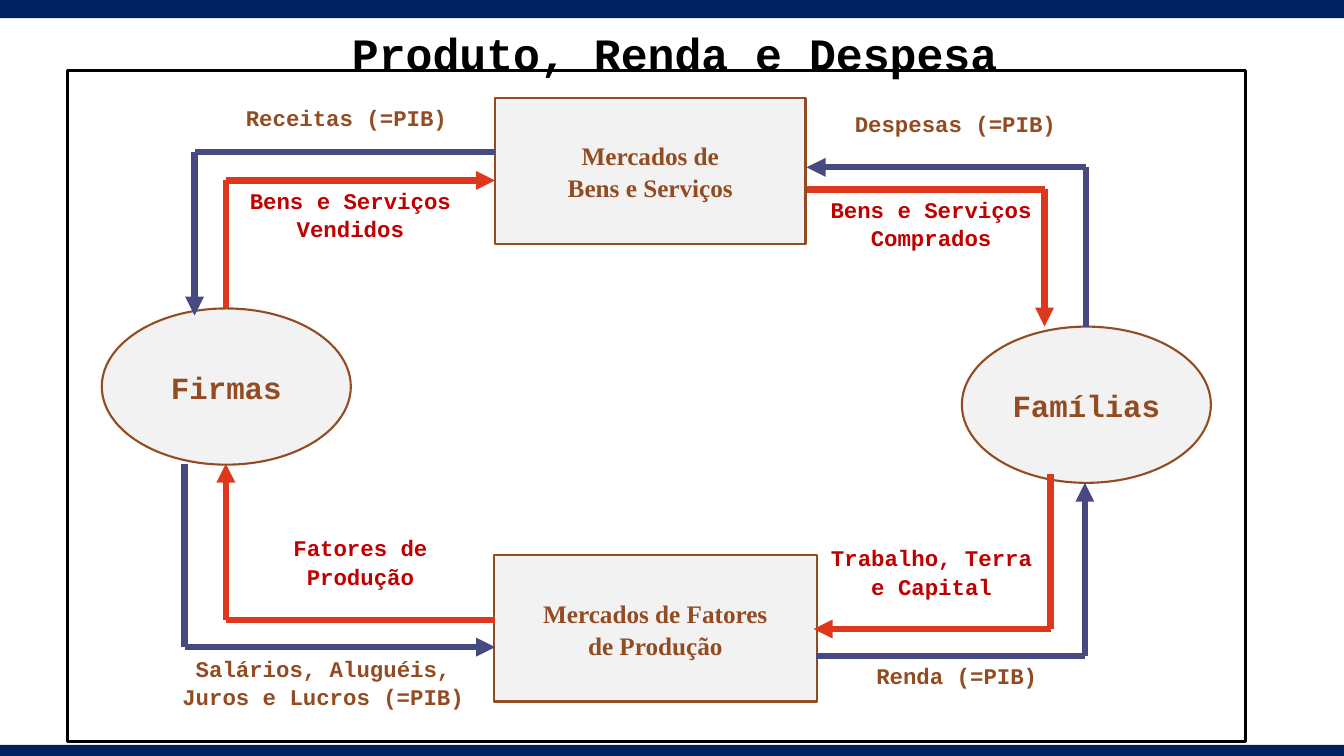
"""Build the circular-flow slide of output, income and expenditure."""
from lxml import etree
from pptx import Presentation
from pptx.dml.color import RGBColor
from pptx.enum.shapes import MSO_CONNECTOR, MSO_SHAPE
from pptx.enum.text import MSO_ANCHOR, PP_ALIGN
from pptx.oxml.ns import qn
from pptx.util import Inches, Pt

RECT, OVAL = MSO_SHAPE.RECTANGLE, MSO_SHAPE.OVAL
STRAIGHT = MSO_CONNECTOR.STRAIGHT
MIDDLE, TOP = MSO_ANCHOR.MIDDLE, MSO_ANCHOR.TOP
LEFT, CENTER = PP_ALIGN.LEFT, PP_ALIGN.CENTER

NAVY = RGBColor(0x00, 0x20, 0x60)
BLACK = RGBColor(0x00, 0x00, 0x00)
BROWN = RGBColor(0x93, 0x4C, 0x22)
GRAY = RGBColor(0xF2, 0xF2, 0xF2)
CRIMSON = RGBColor(0xC0, 0x00, 0x00)
BLUE = RGBColor(0x47, 0x4A, 0x81)
RED = RGBColor(0xDE, 0x38, 0x1C)
MONO, SERIF = "Courier New", "Times New Roman"


def write(s, text, size, font, color, align, anchor, wrap):
    tf = s.text_frame
    tf.text = text
    tf.word_wrap = wrap
    tf.vertical_anchor = anchor
    for p in tf.paragraphs:
        p.alignment = align
        p.line_spacing = 1.05
        for r in p.runs:
            r.font.size = Pt(size)
            r.font.name = font
            r.font.bold = True
            r.font.color.rgb = color


def add_box(kind, box, fill=None, line=None, width=1.5):
    s = slide.shapes.add_shape(kind, *map(Inches, box))
    s.shadow.inherit = False
    if fill is None:
        s.fill.background()
    else:
        s.fill.solid()
        s.fill.fore_color.rgb = fill
    if line is None:
        s.line.fill.background()
    else:
        s.line.color.rgb = line
        s.line.width = Pt(width)
    return s


prs = Presentation()
prs.slide_width, prs.slide_height = Inches(13.33), Inches(7.5)
slide = prs.slides.add_slide(prs.slide_layouts[5])

add_box(RECT, (0, 0, 13.33, 0.18), NAVY)
add_box(RECT, (0, 7.39, 13.33, 0.11), NAVY)

title = slide.shapes.title
title.left, title.top = Inches(3.39), Inches(0.16)
title.width, title.height = Inches(6.75), Inches(0.7)
write(title, "Produto, Renda e Despesa", 32, MONO, BLACK, LEFT, MIDDLE, True)

nodes = [
    (OVAL, (1.01, 3.06, 2.47, 1.55), "Firmas", 22, MONO),
    (OVAL, (9.54, 3.24, 2.47, 1.55), "Famílias", 22, MONO),
    (RECT, (4.9, 5.51, 3.2, 1.45), "Mercados de Fatores\nde Produção", 18, SERIF),
    (RECT, (4.91, 0.97, 3.08, 1.45), "Mercados de\nBens e Serviços", 18, SERIF),
]
for kind, box, text, size, font in nodes:
    s = add_box(kind, box, GRAY, BROWN)
    write(s, text, size, font, BROWN, CENTER, MIDDLE, False)

labels = [
    ((8.38, 1.03, 2.57, 0.51), "Despesas (=PIB)", BROWN, LEFT),
    ((2.34, 0.97, 2.47, 0.51), "Receitas (=PIB)", BROWN, LEFT),
    ((1.57, 6.44, 3.27, 0.88), "Salários, Aluguéis, Juros e Lucros (=PIB)", BROWN, CENTER),
    ((8.31, 6.51, 2.36, 0.51), "Renda (=PIB)", BROWN, CENTER),
    ((2.14, 1.79, 2.67, 0.88), "Bens e Serviços Vendidos", CRIMSON, CENTER),
    ((7.9, 1.88, 2.67, 0.88), "Bens e Serviços Comprados", CRIMSON, CENTER),
    ((8.06, 5.34, 2.36, 0.88), "Trabalho, Terra e Capital", CRIMSON, CENTER),
    ((2.24, 5.24, 2.67, 0.88), "Fatores de Produção", CRIMSON, CENTER),
]
for box, text, color, align in labels:
    s = slide.shapes.add_textbox(*map(Inches, box))
    write(s, text, 16, MONO, color, align, TOP, True)

flows = [
    (BLUE, (10.77, 3.24), (10.77, 1.66), (8, 1.66)),
    (BLUE, (4.91, 1.51), (1.93, 1.51), (1.93, 3.13)),
    (BLUE, (1.83, 4.6), (1.83, 6.42), (4.91, 6.42)),
    (BLUE, (8.09, 6.51), (10.76, 6.51), (10.76, 4.79)),
    (RED, (8, 1.88), (10.36, 1.88), (10.36, 3.24)),
    (RED, (2.24, 3.06), (2.24, 1.79), (4.91, 1.79)),
    (RED, (4.91, 6.15), (2.24, 6.15), (2.24, 4.6)),
    (RED, (10.42, 4.7), (10.42, 6.24), (8.07, 6.24)),
]
for color, start, corner, end in flows:
    for a, b in ((start, corner), (corner, end)):
        s = slide.shapes.add_connector(STRAIGHT, *map(Inches, a + b))
        s.line.color.rgb = color
        s.line.width = Pt(4.5)
        etree.SubElement(s._element.spPr, qn("a:effectLst"))
    etree.SubElement(s.line._get_or_add_ln(), qn("a:tailEnd"), type="triangle")

add_box(RECT, (0.67, 0.7, 11.68, 6.66), line=BLACK, width=2.25)

prs.save("out.pptx")
